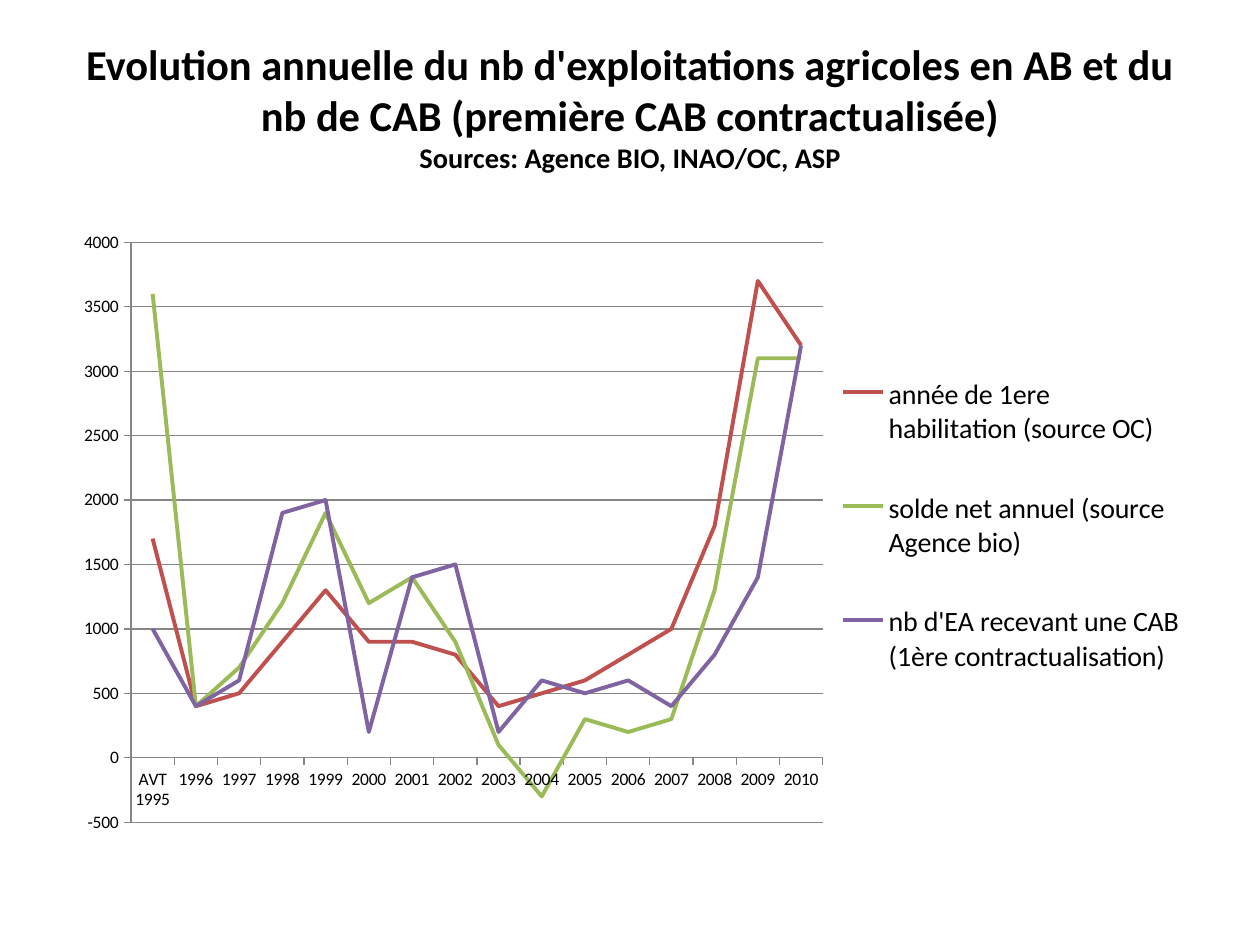
from pptx import Presentation
from pptx.chart.data import CategoryChartData
from pptx.dml.color import RGBColor
from pptx.enum.chart import XL_CHART_TYPE as ChartType, XL_LEGEND_POSITION as LegendPosition
from pptx.enum.chart import XL_TICK_MARK as TickMark
from pptx.enum.text import MSO_ANCHOR as Anchor, PP_ALIGN as Align
from pptx.oxml import parse_xml
from pptx.oxml.ns import nsdecls
from pptx.util import Inches, Pt

TITLE = ("Evolution annuelle du nb d'exploitations agricoles en AB "
         "et du nb de CAB (première CAB contractualisée)")
SOURCES = "Sources: Agence BIO, INAO/OC, ASP"
YEARS = ["AVT 1995"] + [str(year) for year in range(1996, 2011)]
SERIES = [
    ("année de 1ere habilitation (source OC)", "C0504D",
     [1700, 400, 500, 900, 1300, 900, 900, 800, 400, 500, 600, 800, 1000, 1800, 3700, 3200]),
    ("solde net annuel (source Agence bio)", "9BBB59",
     [3600, 400, 700, 1200, 1900, 1200, 1400, 900, 100, -300, 300, 200, 300, 1300, 3100, 3100]),
    ("nb d'EA recevant une CAB (1ère contractualisation)", "8064A2",
     [1000, 400, 600, 1900, 2000, 200, 1400, 1500, 200, 600, 500, 600, 400, 800, 1400, 3200]),
]


def color(hex_value):
    return RGBColor.from_string(hex_value)


def format_font(font, name, size, hex_value, bold=False):
    font.name, font.size, font.bold = name, Pt(size), bold
    font.color.rgb = color(hex_value)


def add_text(paragraph, text, **font_format):
    run = paragraph.add_run()
    run.text = text
    format_font(run.font, **font_format)


def layout_xml(x, y, width, height, target=""):
    """Manual chart layout, in fractions of the chart's size."""
    return parse_xml(
        f'<c:layout {nsdecls("c")}><c:manualLayout>{target}'
        '<c:xMode val="edge"/><c:yMode val="edge"/>'
        f'<c:x val="{x}"/><c:y val="{y}"/><c:w val="{width}"/><c:h val="{height}"/>'
        '</c:manualLayout></c:layout>')


class SlideBuilder:
    font = "Calibri"
    ink = "000000"
    grid = "868686"

    def __init__(self, slide):
        self.slide = slide

    def title(self, box, lines):
        frame = self.slide.shapes.add_textbox(*map(Inches, box)).text_frame
        frame.word_wrap = True
        frame.vertical_anchor = Anchor.TOP
        frame.margin_top = 0
        paragraph = frame.paragraphs[0]
        paragraph.alignment = Align.CENTER
        for index, (text, size) in enumerate(lines):
            if index:
                paragraph.add_line_break()
            add_text(paragraph, text, name=self.font, size=size, hex_value=self.ink, bold=True)

    def line_chart(self, box, categories, series_list):
        data = CategoryChartData()
        data.categories = categories
        for name, _, values in series_list:
            data.add_series(name, values)
        chart = self.slide.shapes.add_chart(ChartType.LINE, *map(Inches, box), data).chart
        chart.has_title = False
        format_font(chart.font, self.font, 10, self.ink)
        for series, (_, hex_value, _) in zip(chart.plots[0].series, series_list):
            series.smooth = False
            series.format.line.color.rgb = color(hex_value)
            series.format.line.width = Pt(2.25)
        self.axes(chart)
        self.legend(chart)

    def axes(self, chart):
        value_axis = chart.value_axis
        value_axis.minimum_scale, value_axis.maximum_scale = -500, 4000
        value_axis.major_unit = 500
        value_axis.has_major_gridlines = True
        for axis in (chart.category_axis, value_axis):
            axis.major_tick_mark = TickMark.OUTSIDE
            axis.minor_tick_mark = TickMark.NONE
        for part in (chart.category_axis, value_axis, value_axis.major_gridlines):
            part.format.line.color.rgb = color(self.grid)
            part.format.line.width = Pt(0.75)
        # Fixed inner plot area
        plot_area = chart.plots[0]._element.getparent()
        for layout in plot_area.findall(layout_xml(0, 0, 1, 1).tag):
            plot_area.remove(layout)
        plot_area.insert(0, layout_xml(0.06, 0.035, 0.61, 0.93, '<c:layoutTarget val="inner"/>'))

    def legend(self, chart):
        chart.has_legend = True
        legend = chart.legend
        legend.position = LegendPosition.RIGHT
        legend.include_in_layout = False
        format_font(legend.font, self.font, 16, self.ink)
        element = legend._element
        layout = layout_xml(0.69, 0.18, 0.3, 0.62)
        for old in element.findall(layout.tag):
            element.remove(old)
        element.insert(1, layout)


def main():
    presentation = Presentation()
    presentation.slide_width, presentation.slide_height = Inches(10), Inches(7.5)
    builder = SlideBuilder(presentation.slides.add_slide(presentation.slide_layouts[6]))
    # Title and sources
    builder.title((0.5, 0.3, 9, 1.25), [(TITLE, 24.3), (SOURCES, 16.2)])
    # Yearly farm counts
    builder.line_chart((0.5, 1.75, 9, 4.95), YEARS, SERIES)
    presentation.save("out.pptx")


if __name__ == "__main__":
    main()
